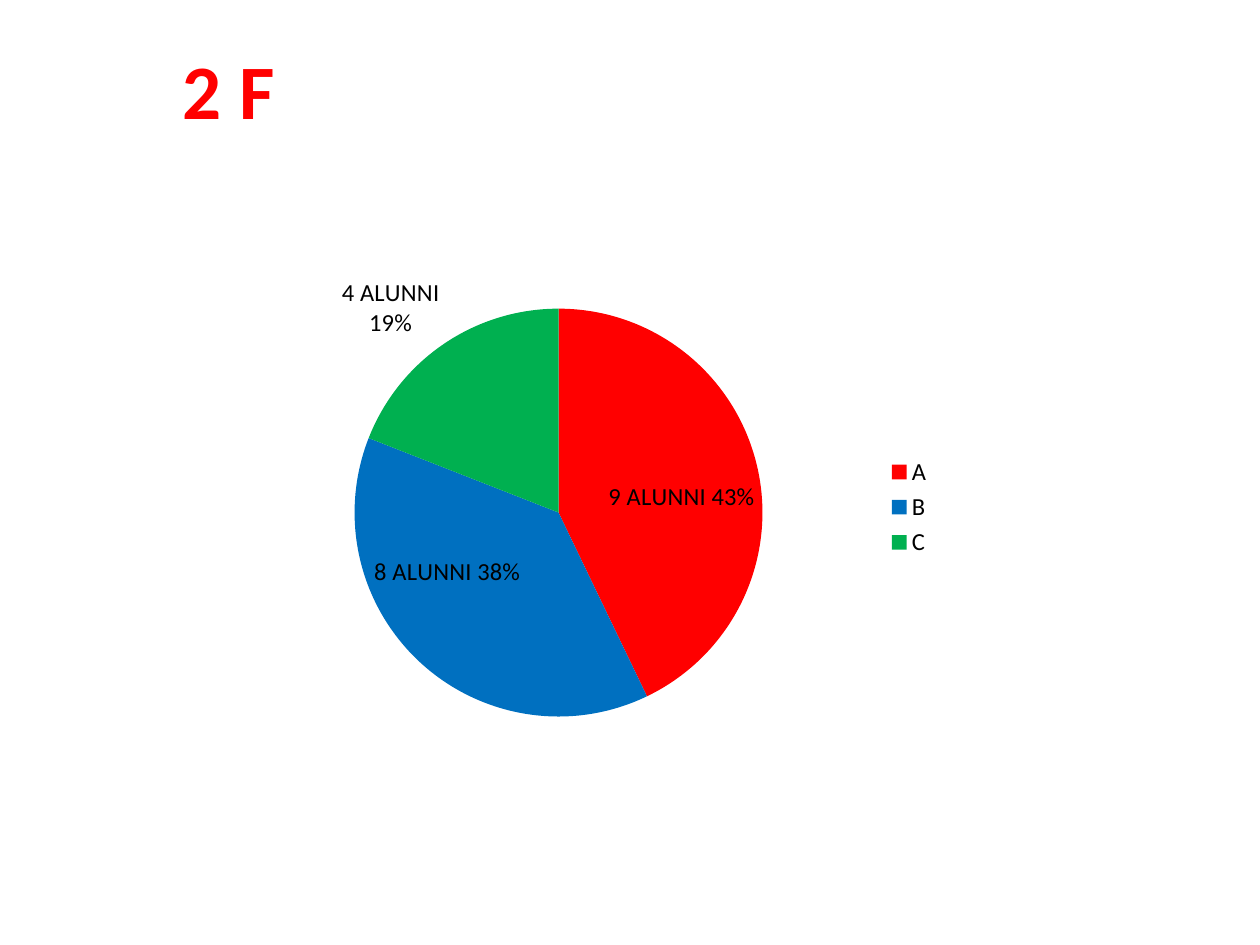
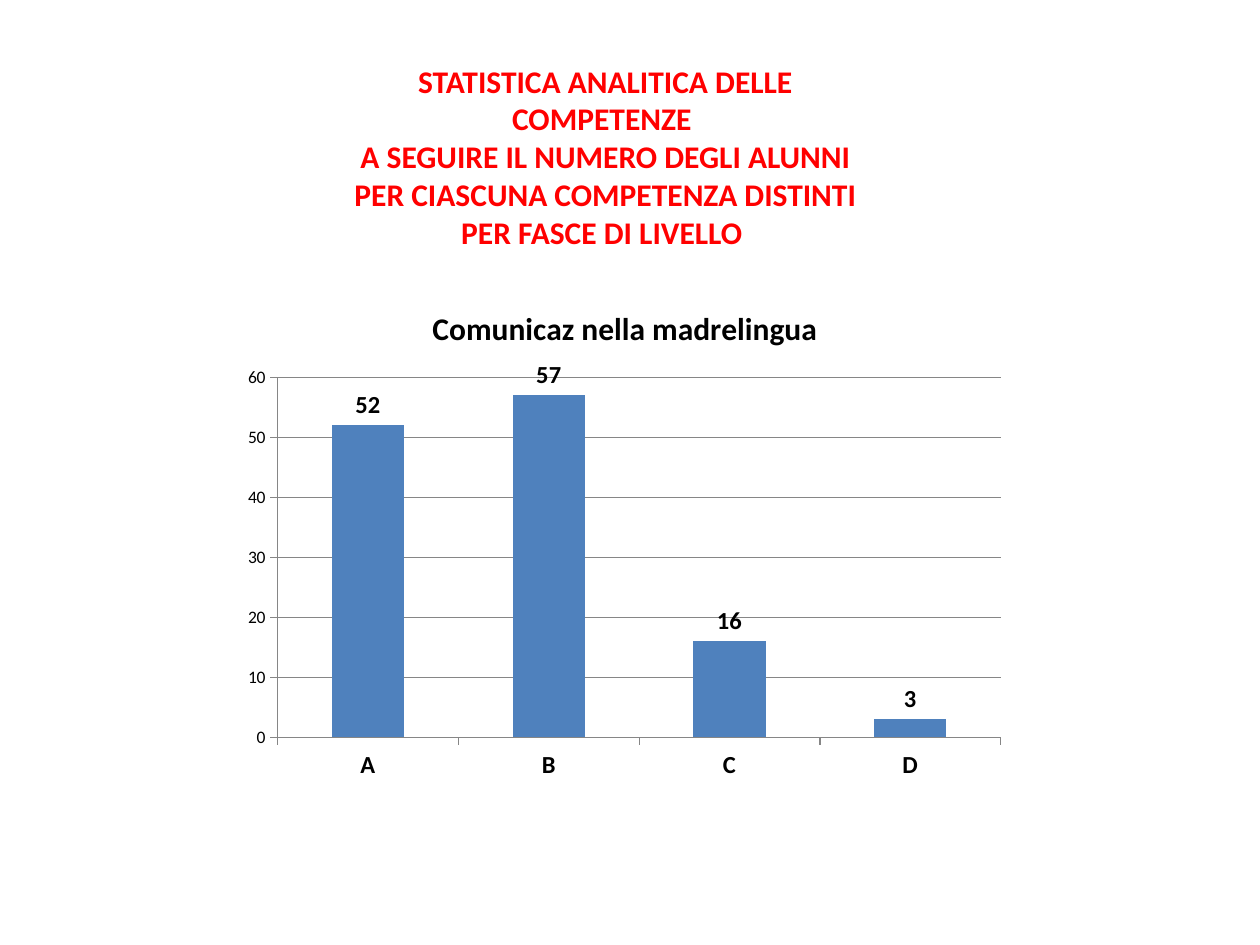
"""Build two slides of class statistics: a pie of levels and a column chart of competences."""
import lxml.etree
import pptx
import pptx.chart.data
import pptx.dml.color
import pptx.enum.chart
import pptx.enum.text
import pptx.oxml.ns
import pptx.util

FONT = "Calibri"
WIDTH, HEIGHT = 10, 7.5
COLORS = {
    "title": "FF0000",
    "text": "000000",
    "axis": "868686",
    "column": "4F81BD",
    "A": "FF0000",
    "B": "0070C0",
    "C": "00B050",
}
LEVELS = {"A": (9, "9 ALUNNI 43%"), "B": (8, "8 ALUNNI 38%"), "C": (4, "4 ALUNNI 19%")}
COMPETENCE = "Comunicaz nella madrelingua"
COMPETENCE_COUNTS = {"A": 52, "B": 57, "C": 16, "D": 3}


def color(name):
    """Return the named colour."""
    return pptx.dml.color.RGBColor.from_string(COLORS[name])


def place(left, top, width, height):
    """Turn percentages of the slide's size into lengths."""
    return [pptx.util.Inches(percent * side / 100)
            for percent, side in zip((left, top, width, height), (WIDTH, HEIGHT) * 2)]


def style_font(font, size, bold=False, color_name="text"):
    """Apply the shared typeface with a size, weight and colour."""
    font.name, font.size, font.bold = FONT, pptx.util.Pt(size), bold
    font.color.rgb = color(color_name)


def add_title(slide, area, lines, size):
    """Add a centred bold title, one paragraph per line."""
    frame = slide.shapes.add_textbox(*place(*area)).text_frame
    frame.word_wrap = True
    frame.auto_size = pptx.enum.text.MSO_AUTO_SIZE.SHAPE_TO_FIT_TEXT
    for index, line in enumerate(lines):
        paragraph = frame.paragraphs[0] if index == 0 else frame.add_paragraph()
        paragraph.alignment = pptx.enum.text.PP_ALIGN.CENTER
        run = paragraph.add_run()
        run.text = line
        style_font(run.font, size, True, "title")


def set_plot_area(chart, left, top, width, height):
    """Fix the inner plot area as percentages of the chart's size."""
    plot_area = chart._chartSpace.chart.plotArea
    qualified = pptx.oxml.ns.qn
    for old_layout in plot_area.findall(qualified("c:layout")):
        plot_area.remove(old_layout)
    layout = lxml.etree.Element(qualified("c:layout"))
    plot_area.insert(0, layout)
    manual = lxml.etree.SubElement(layout, qualified("c:manualLayout"))
    settings = {"layoutTarget": "inner", "xMode": "edge", "yMode": "edge",
                "x": left / 100, "y": top / 100, "w": width / 100, "h": height / 100}
    for tag, value in settings.items():
        lxml.etree.SubElement(manual, qualified(f"c:{tag}")).set("val", str(value))


def add_chart(slide, kind, area, plot_percentages, series_name, values):
    """Add a one-series chart with the shared font and return it."""
    data = pptx.chart.data.CategoryChartData()
    data.categories = list(values)
    data.add_series(series_name, list(values.values()))
    chart = slide.shapes.add_chart(kind, *place(*area), data).chart
    style_font(chart.font, 10)
    set_plot_area(chart, *plot_percentages)
    return chart


def style_labels(labels, position):
    """Show values in bold at the given position."""
    labels.show_value = True
    labels.position = position
    style_font(labels.font, 14, True)


def add_level_pie(slide, area):
    """Add the pie of pupils per level with its own labels."""
    chart = add_chart(slide, pptx.enum.chart.XL_CHART_TYPE.PIE, area,
                      (17.65, 12.2, 56.9, 77.7), "Series 1",
                      {level: count for level, (count, _) in LEVELS.items()})
    chart.has_title = False
    chart.has_legend = True
    chart.legend.position = pptx.enum.chart.XL_LEGEND_POSITION.RIGHT
    chart.legend.include_in_layout = False
    style_font(chart.legend.font, 14)
    chart.plots[0].vary_by_categories = True
    series = chart.plots[0].series[0]
    best_fit = pptx.enum.chart.XL_LABEL_POSITION.BEST_FIT
    style_labels(series.data_labels, best_fit)
    for index, (level, (_, caption)) in enumerate(LEVELS.items()):
        point = series.points[index]
        point.format.fill.solid()
        point.format.fill.fore_color.rgb = color(level)
        label = point.data_label
        run = label.text_frame.paragraphs[0].add_run()
        run.text = caption
        style_font(run.font, 14)
        label.position = best_fit
    for flag in chart._chartSpace.iter(pptx.oxml.ns.qn("c:showPercent")):
        flag.set("val", "1")


def style_axis(axis, size, bold):
    """Give an axis outward ticks, a grey line and its label font."""
    axis.major_tick_mark = pptx.enum.chart.XL_TICK_MARK.OUTSIDE
    axis.minor_tick_mark = pptx.enum.chart.XL_TICK_MARK.NONE
    axis.format.line.color.rgb = color("axis")
    style_font(axis.tick_labels.font, size, bold)


def add_competence_columns(slide, area):
    """Add the columns of pupils per level for one competence."""
    chart = add_chart(slide, pptx.enum.chart.XL_CHART_TYPE.COLUMN_CLUSTERED, area,
                      (5.7, 18.55, 92.25, 71.1), COMPETENCE, COMPETENCE_COUNTS)
    chart.has_legend = False
    chart.has_title = True
    run = chart.chart_title.text_frame.paragraphs[0].add_run()
    run.text = COMPETENCE
    style_font(run.font, 18, True)
    style_axis(chart.category_axis, 14, True)
    style_axis(chart.value_axis, 10, False)
    chart.value_axis.minimum_scale, chart.value_axis.maximum_scale = 0, 60
    chart.value_axis.major_unit = 10
    chart.value_axis.has_major_gridlines = True
    chart.value_axis.major_gridlines.format.line.color.rgb = color("axis")
    plot = chart.plots[0]
    plot.gap_width, plot.vary_by_categories = 150, False
    series = plot.series[0]
    series.format.fill.solid()
    series.format.fill.fore_color.rgb = color("column")
    style_labels(series.data_labels, pptx.enum.chart.XL_LABEL_POSITION.OUTSIDE_END)


def main():
    """Build and save the presentation."""
    presentation = pptx.Presentation()
    presentation.slide_width = pptx.util.Inches(WIDTH)
    presentation.slide_height = pptx.util.Inches(HEIGHT)
    blank = presentation.slide_layouts[6]

    level_slide = presentation.slides.add_slide(blank)
    add_title(level_slide, (8.3, 3.9, 19.7, 11.2), ["2 F"], 44)
    add_level_pie(level_slide, (18.1, 25.87, 56.9, 55.6))

    competence_slide = presentation.slides.add_slide(blank)
    add_title(competence_slide, (25.6, 5.87, 44.9, 21.6), [
        "STATISTICA ANALITICA DELLE COMPETENZE ",
        "A SEGUIRE IL NUMERO DEGLI ALUNNI PER CIASCUNA COMPETENZA "
        "DISTINTI PER FASCE DI LIVELLO ",
    ], 18)
    add_competence_columns(competence_slide, (18.5, 30, 62.2, 53.6))

    presentation.save("out.pptx")


if __name__ == "__main__":
    main()
